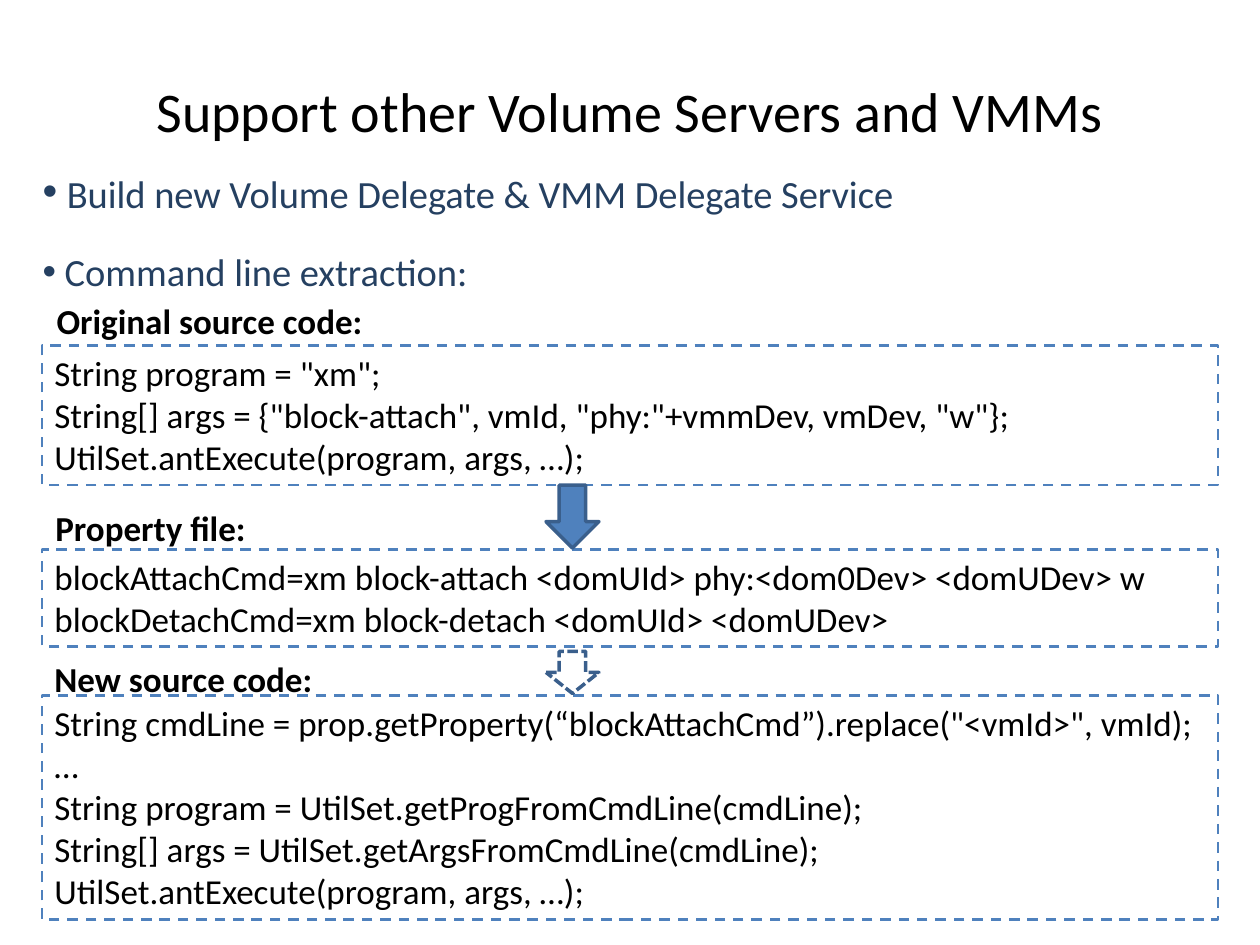
from dataclasses import dataclass
from typing import Optional

from lxml import etree
from pptx import Presentation
from pptx.dml.color import RGBColor
from pptx.enum.dml import MSO_LINE
from pptx.enum.shapes import MSO_SHAPE
from pptx.enum.text import MSO_ANCHOR, PP_ALIGN
from pptx.oxml.ns import qn
from pptx.util import Pt

RECT, DOWN_ARROW = MSO_SHAPE.RECTANGLE, MSO_SHAPE.DOWN_ARROW
DASH, SHORT_DASH = MSO_LINE.DASH, MSO_LINE.SQUARE_DOT
TOP, MIDDLE = MSO_ANCHOR.TOP, MSO_ANCHOR.MIDDLE
LEFT, CENTER = PP_ALIGN.LEFT, PP_ALIGN.CENTER

FONT = "Calibri"
BLACK, NAVY, BLUE, DARK_BLUE = "000000", "254061", "4F81BD", "3A5F8C"
BOX_LEFT, BOX_WIDTH = 24, 672
ARROW_LEFT, ARROW_WIDTH = 312, 30.24


@dataclass
class CodeStep:
    label: str
    label_left: float
    label_top: float
    label_width: float
    box_top: float
    box_height: float
    code: list[str]  # one paragraph each, "\n" is a line break


@dataclass
class Arrow:
    top: float
    height: float
    fill: Optional[str] = None
    dash: Optional[MSO_LINE] = None


STEPS = [
    CodeStep("Original source code:", 25.2, 167.76, 198, 197.28, 79.92, [
        'String program = "xm";',
        'String[] args = {"block-attach", vmId, "phy:"+vmmDev, vmDev, "w"};',
        "UtilSet.antExecute(program, args, …);",
    ]),
    CodeStep("Property file:", 24.5, 285.84, 162, 313.92, 55.44, [
        "blockAttachCmd=xm block-attach <domUId> phy:<dom0Dev> <domUDev> w",
        "blockDetachCmd=xm block-detach <domUId> <domUDev>",
    ]),
    CodeStep("New source code:", 24, 372.24, 198, 397.44, 128.16, [
        'String cmdLine = prop.getProperty(“blockAttachCmd”).replace("<vmId>", vmId);',
        "…",
        "String program = UtilSet.getProgFromCmdLine(cmdLine);\n"
        "String[] args = UtilSet.getArgsFromCmdLine(cmdLine);",
        "UtilSet.antExecute(program, args, …);",
    ]),
]
ARROWS = [Arrow(277.2, 36, fill=BLUE), Arrow(372.24, 24, dash=SHORT_DASH)]
BULLETS = [
    [(" ", 24), ("Build new Volume Delegate & VMM Delegate Service", 22)],
    [(" Command line extraction:", 22)],
]


def rgb(hex_color: str) -> RGBColor:
    return RGBColor.from_string(hex_color)


def add_run(p, text: str, size: float, color: str = BLACK, bold: bool = False) -> None:
    r = p.add_run()
    r.text = text
    r.font.name, r.font.size, r.font.bold = FONT, Pt(size), bold
    r.font.color.rgb = rgb(color)


def add_paragraph(tf, first: bool, align: PP_ALIGN = LEFT):
    p = tf.paragraphs[0] if first else tf.add_paragraph()
    p.alignment = align
    return p


def add_text_frame(s, left: float, top: float, width: float, height: float,
                   anchor: MSO_ANCHOR = TOP):
    tf = s.shapes.add_textbox(Pt(left), Pt(top), Pt(width), Pt(height)).text_frame
    tf.word_wrap, tf.vertical_anchor = True, anchor
    return tf


def add_outlined(s, kind: MSO_SHAPE, left: float, top: float, width: float, height: float,
                 line: str, weight: float, dash: Optional[MSO_LINE] = None,
                 fill: Optional[str] = None):
    sp = s.shapes.add_shape(kind, Pt(left), Pt(top), Pt(width), Pt(height))
    sp.shadow.inherit = False
    if fill:
        sp.fill.solid()
        sp.fill.fore_color.rgb = rgb(fill)
    else:
        sp.fill.background()
    sp.line.color.rgb, sp.line.width = rgb(line), Pt(weight)
    if dash:
        sp.line.dash_style = dash
    return sp


def add_bullets(s) -> None:
    tf = add_text_frame(s, 17.28, 91.44, 606.24, 81.36)
    for i, runs in enumerate(BULLETS):
        p = add_paragraph(tf, i == 0)
        p.space_before, p.space_after = Pt(12), Pt(6)
        pPr = p._p.get_or_add_pPr()
        etree.SubElement(pPr, qn("a:buFont")).set("typeface", "Arial")
        etree.SubElement(pPr, qn("a:buChar")).set("char", "•")
        for text, size in runs:
            add_run(p, text, size, NAVY)


def add_step(s, step: CodeStep) -> None:
    sp = add_outlined(s, RECT, BOX_LEFT, step.box_top, BOX_WIDTH, step.box_height,
                      BLUE, 1.5, DASH)
    tf = sp.text_frame
    tf.word_wrap, tf.vertical_anchor = True, TOP
    for i, block in enumerate(step.code):
        p = add_paragraph(tf, i == 0)
        for j, line in enumerate(block.split("\n")):
            if j:
                p.add_line_break()
            add_run(p, line, 20)
    label = add_text_frame(s, step.label_left, step.label_top, step.label_width, 31.68)
    add_run(add_paragraph(label, True), step.label, 20, bold=True)


def main() -> None:
    prs = Presentation()
    prs.slide_width, prs.slide_height = Pt(720), Pt(540)
    s = prs.slides.add_slide(prs.slide_layouts[6])

    # Title
    title = add_text_frame(s, 36, 18, 648, 90, MIDDLE)
    add_run(add_paragraph(title, True, CENTER), "Support other Volume Servers and VMMs", 32)

    # Bullets
    add_bullets(s)

    # Code boxes with their labels
    for step in STEPS:
        add_step(s, step)

    # Arrows between the boxes
    for a in ARROWS:
        add_outlined(s, DOWN_ARROW, ARROW_LEFT, a.top, ARROW_WIDTH, a.height,
                     DARK_BLUE, 2, a.dash, a.fill)

    prs.save("out.pptx")


if __name__ == "__main__":
    main()
